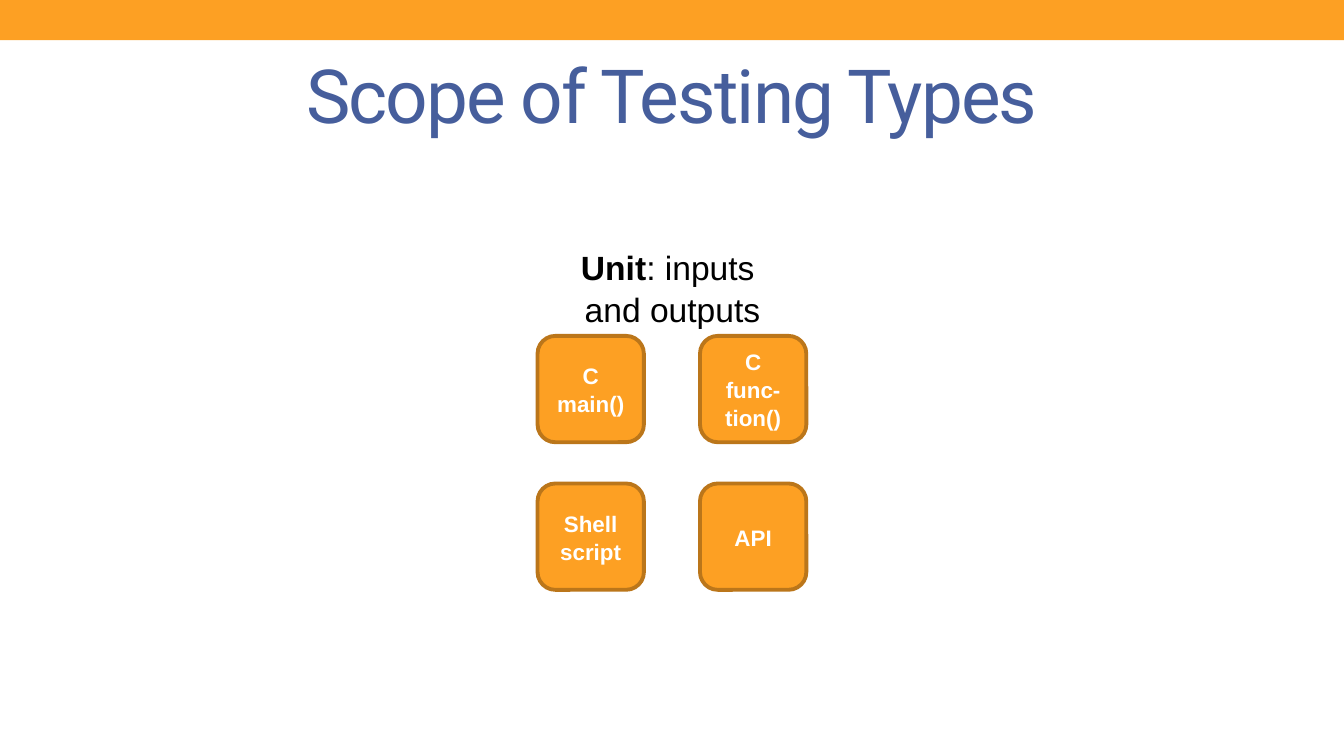
from pptx import Presentation
from pptx.dml.color import RGBColor
from pptx.enum.shapes import MSO_SHAPE as Preset
from pptx.enum.text import MSO_ANCHOR as Anchor, PP_ALIGN as Align
from pptx.util import Cm, Pt

ORANGE = "FDA023"
BROWN = "BB761A"
BLUE = "465E9C"
WHITE = "FFFFFF"
BLACK = "000000"

UNITS = [["C\vmain()", "C\vfunc-tion()"], ["Shell script", "API"]]
UNIT_LEFT, UNIT_TOP, UNIT_SIZE = 10.16, 6.35, 2.01
COLUMN_STEP, ROW_STEP = 3.07, 2.79


def color(value):
    """Turn a hex string into a colour."""
    return RGBColor.from_string(value)


def add_run(paragraph, text, size, font_color, font_name="Arial", bold=False):
    """Append a formatted run to a paragraph."""
    run = paragraph.add_run()
    run.text = text
    run.font.name = font_name
    run.font.size = Pt(size)
    run.font.bold = bold
    run.font.color.rgb = color(font_color)
    return run


def add_lines(paragraph, text, *style, **options):
    """Append text whose lines are parted by vertical tabs."""
    for index, line in enumerate(text.split("\v")):
        if index:
            paragraph.add_line_break()
        add_run(paragraph, line, *style, **options)


def center_text(frame, anchor=Anchor.MIDDLE, spacing=1.0):
    """Set up a wrapped, centred frame and return its paragraph."""
    frame.word_wrap = True
    frame.vertical_anchor = anchor
    paragraph = frame.paragraphs[0]
    paragraph.alignment = Align.CENTER
    paragraph.line_spacing = spacing
    return paragraph


def add_box(slide, preset, left, top, width, height):
    """Add an orange shape without outline or shadow."""
    shape = slide.shapes.add_shape(preset, Cm(left), Cm(top), Cm(width), Cm(height))
    shape.shadow.inherit = False
    shape.fill.solid()
    shape.fill.fore_color.rgb = color(ORANGE)
    shape.line.fill.background()
    return shape


def add_title(slide, text):
    """Fill and place the title placeholder."""
    title = slide.shapes.title
    title.left, title.top, title.width, title.height = Cm(1.27), Cm(0.74), Cm(22.86), Cm(2.06)
    run = add_run(center_text(title.text_frame), text, 40, BLUE, "Roboto")
    run.font._element.set("spc", "-100")


def add_unit(slide, text, left, top):
    """Add one outlined unit with its label."""
    unit = add_box(slide, Preset.ROUNDED_RECTANGLE, left, top, UNIT_SIZE, UNIT_SIZE)
    unit.line.color.rgb = color(BROWN)
    unit.line.width = Pt(2.08)
    paragraph = center_text(unit.text_frame, spacing=1.04)
    add_lines(paragraph, text, 12, WHITE, bold=True)


def add_caption(slide, term, text):
    """Add the caption that stands above the units."""
    box = slide.shapes.add_textbox(Cm(10.21), Cm(4.55), Cm(5), Cm(1.8))
    paragraph = center_text(box.text_frame, Anchor.BOTTOM, 1.04)
    add_run(paragraph, term, 18, BLACK, bold=True)
    add_lines(paragraph, text, 18, BLACK)


def main():
    """Build the slide and save it."""
    presentation = Presentation()
    presentation.slide_width, presentation.slide_height = Cm(25.4), Cm(14.29)
    slide = presentation.slides.add_slide(presentation.slide_layouts[5])
    add_box(slide, Preset.RECTANGLE, 0, 0, 25.4, 0.76)
    add_title(slide, "Scope of Testing Types")
    for row, labels in enumerate(UNITS):
        for column, label in enumerate(labels):
            add_unit(slide, label, UNIT_LEFT + column * COLUMN_STEP, UNIT_TOP + row * ROW_STEP)
    add_caption(slide, "Unit", ": inputs \vand outputs")
    presentation.save("out.pptx")


if __name__ == "__main__":
    main()
